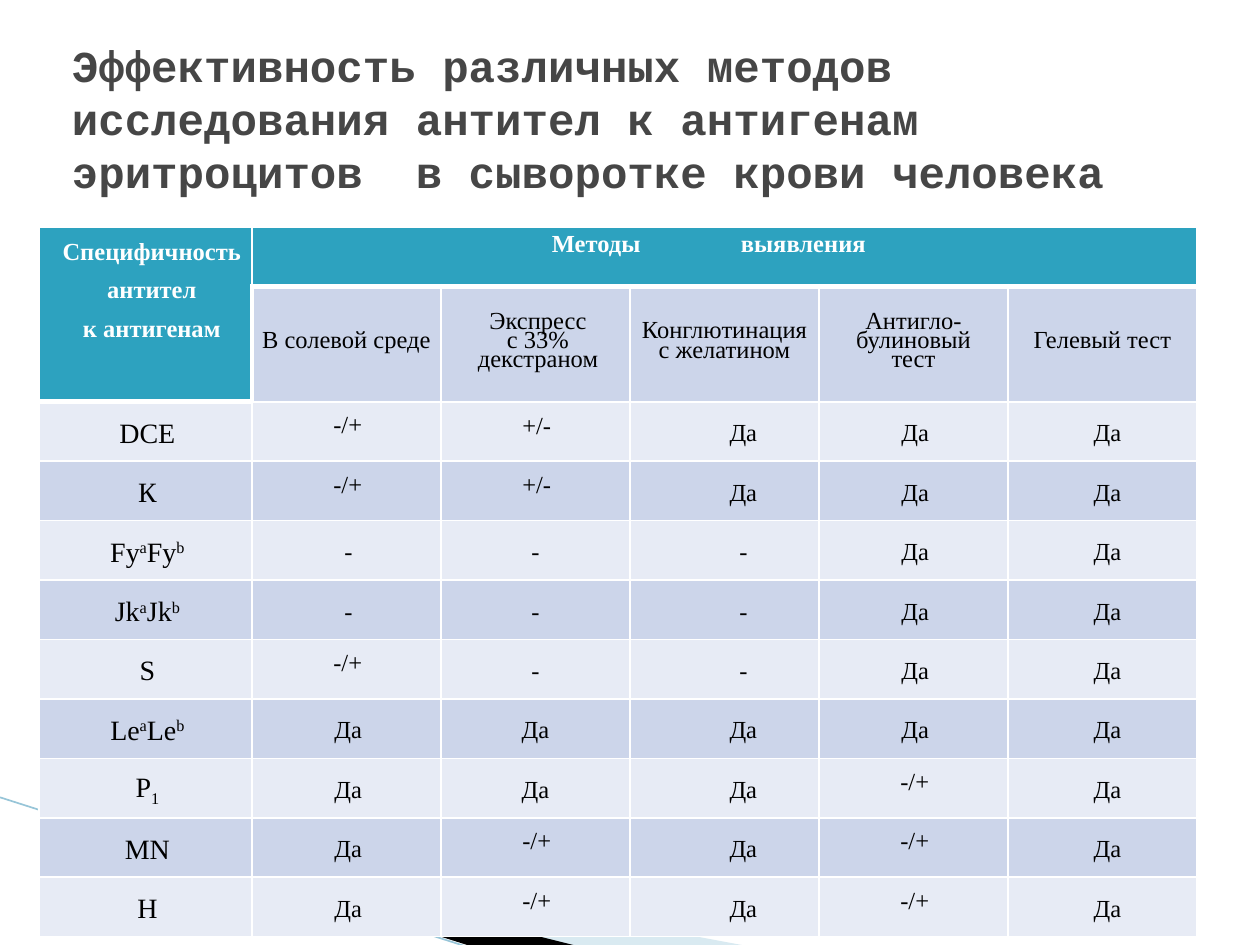
import collections

import lxml.etree
import pptx
import pptx.dml.color
import pptx.enum.shapes
import pptx.enum.text
import pptx.oxml
import pptx.oxml.ns
import pptx.util

Inches, Pt = pptx.util.Inches, pptx.util.Pt
Align = pptx.enum.text.PP_ALIGN
Anchor = pptx.enum.text.MSO_ANCHOR
qn = pptx.oxml.ns.qn

COLORS = {
    "title": "464646", "header": "2DA2BF", "header_text": "FFFFFF",
    "text": "000000", "border": "FFFFFF", "dark": "CCD5EA", "light": "E7EBF5",
    "pale_wave": "A0CBDC", "black_wave": "000000", "wave_line": "97C5D8",
}
Box = collections.namedtuple("Box", "left top width height")

TITLE = ("Эффективность различных методов исследования антител к антигенам "
         "эритроцитов  в сыворотке крови человека")
METHODS = [
    (["В солевой среде"], 10.8, 0, 0),
    (["Экспресс", "с 33%", "декстраном"], 11, 0.04, 0),
    (["Конглютинация с желатином"], 11, 0, 0),
    (["Антигло-", "булиновый", "тест"], 10.8, 0, 0),
    (["Гелевый тест"], 10.8, 0.08, -0.11),
]
RESULTS = [
    (["DCE"], ["-/+", "+/-", "Да", "Да", "Да"]),
    (["К"], ["-/+", "+/-", "Да", "Да", "Да"]),
    (["Fy", "a", "Fy", "b"], ["-", "-", "-", "Да", "Да"]),
    (["Jk", "a", "Jk", "b"], ["-", "-", "-", "Да", "Да"]),
    (["S"], ["-/+", "-", "-", "Да", "Да"]),
    (["Le", "a", "Le", "b"], ["Да", "Да", "Да", "Да", "Да"]),
    (["Р", "1"], ["Да", "Да", "Да", "-/+", "Да"]),
    (["MN"], ["Да", "-/+", "Да", "-/+", "Да"]),
    (["H"], ["Да", "-/+", "Да", "-/+", "Да"]),
]
RESULT_INDENTS = [0.03, 0, 0.3, 0.03, 0.08]
MIXED_SPACING = {"-/+": Pt(8.6), "+/-": Pt(8.9)}


def rgb(name):
    """Return the named colour."""
    return pptx.dml.color.RGBColor.from_string(COLORS[name])


def set_font(font, name, size, color, bold=False):
    """Format a font."""
    font.name, font.size, font.bold = name, Pt(size), bold
    font.color.rgb = rgb(color)


def add_wave(slide, box, points, color, opacity=100):
    """Draw a filled outline from points given as shares of the box."""
    corners = [(box.left + x * box.width, box.top + y * box.height)
               for x, y in points]
    builder = slide.shapes.build_freeform(*corners[0], scale=1.0)
    builder.add_line_segments(corners[1:], close=True)
    shape = builder.convert_to_shape()
    shape.shadow.inherit = False
    shape.fill.solid()
    shape.fill.fore_color.rgb = rgb(color)
    shape.line.fill.background()
    if opacity < 100:
        fill = shape._element.spPr.find(qn("a:solidFill"))
        lxml.etree.SubElement(fill[0], qn("a:alpha"), val=str(opacity * 1000))


def add_corner(slide, box):
    """Draw the two waves and the line of the lower left corner."""
    black_box = box._replace(width=0.75 * box.width)
    add_wave(slide, box, [(0, 0), (1, 1), (0.74, 1)], "pale_wave", 40)
    add_wave(slide, black_box, [(0, 0), (1, 1), (0.79, 1)], "black_wave")
    line = slide.shapes.add_connector(
        pptx.enum.shapes.MSO_CONNECTOR.STRAIGHT,
        int(box.left - 0.1 * box.width), int(box.top - 0.17 * box.height),
        int(box.left + 0.59 * box.width), int(box.top + 1.01 * box.height))
    line.line.color.rgb = rgb("wave_line")
    line.line.width = Pt(0.95)
    lxml.etree.SubElement(line._element.spPr, qn("a:effectLst"))


def place_title(slide, box):
    """Move and format the title placeholder."""
    title = slide.shapes.title
    title.left, title.top, title.width, title.height = box
    frame = title.text_frame
    frame.text = TITLE
    frame.word_wrap = True
    frame.auto_size = pptx.enum.text.MSO_AUTO_SIZE.NONE
    frame.vertical_anchor = Anchor.MIDDLE
    paragraph = frame.paragraphs[0]
    paragraph.alignment = Align.LEFT
    set_font(paragraph.font, "Courier New", 25.2, "title", True)


def style_cell(cell, row, column, color):
    """Set the borders, fill and insets of a cell."""
    heavy = {
        "L": (row, column) == (1, 1),
        "R": (row, column) == (1, 0),
        "T": (row == 1 and column > 0) or (row == 2 and column == 0),
        "B": (row == 0) or (row == 1 and column == 0),
    }
    properties = cell._tc.get_or_add_tcPr()
    for side, is_heavy in heavy.items():
        line = lxml.etree.SubElement(properties, qn(f"a:ln{side}"),
                                     w=str(Pt(3 if is_heavy else 1)))
        fill = lxml.etree.SubElement(line, qn("a:solidFill"))
        lxml.etree.SubElement(fill, qn("a:srgbClr"), val=COLORS["border"])
    cell.fill.solid()
    cell.fill.fore_color.rgb = rgb(color)
    cell.margin_left = cell.margin_right = Inches(0.03)
    cell.margin_top = cell.margin_bottom = 0


def write_cell(cell, lines, spacing, margin=0, indent=0, size=14,
               color="text", bold=False, align=Align.CENTER):
    """Write lines, each a list of runs, with one paragraph format."""
    frame = cell.text_frame
    for index, runs in enumerate(lines):
        paragraph = frame.add_paragraph() if index else frame.paragraphs[0]
        paragraph.alignment = align
        paragraph.line_spacing = spacing
        properties = paragraph._p.get_or_add_pPr()
        properties.set("marL", str(Inches(margin)))
        properties.set("indent", str(Inches(indent)))
        for order, text in enumerate(runs):
            run = paragraph.add_run()
            run.text = text
            set_font(run.font, "Times New Roman", size, color, bold)
            if order % 2:
                shift = "-25000" if text.isdigit() else "30000"
                run.font._element.set("baseline", shift)


def write_headers(table):
    """Merge and fill the two header rows."""
    table.cell(0, 0).merge(table.cell(1, 0))
    table.cell(0, 1).merge(table.cell(0, 5))
    write_cell(table.cell(0, 0),
               [["Специфичность"], ["антител"], ["к антигенам"]],
               Pt(22), indent=0.1, color="header_text", bold=True)
    write_cell(table.cell(0, 1), [["Методы\t\tвыявления"]], 1.15, 2.35,
               color="header_text", bold=True, align=Align.LEFT)
    for column, (lines, spacing, margin, indent) in enumerate(METHODS, 1):
        cell = table.cell(1, column)
        cell.vertical_anchor = Anchor.MIDDLE
        write_cell(cell, [[line] for line in lines], Pt(spacing), margin, indent)


def add_results_table(slide, box):
    """Add the table of antigens and detection methods."""
    rows, columns = len(RESULTS) + 2, len(METHODS) + 1
    table = slide.shapes.add_table(rows, columns, *box).table
    table.first_row = table.horz_banding = False
    first_width, method_height = Inches(1.69), Inches(0.6)
    for index, column in enumerate(table.columns):
        column.width = (int((box.width - first_width) / (columns - 1))
                        if index else first_width)
    for index, row in enumerate(table.rows):
        row.height = (method_height if index == 1
                      else int((box.height - method_height) / (rows - 1)))
        for column in range(columns):
            is_header = index == 0 or (index == 1 and column == 0)
            color = "header" if is_header else "dark" if index % 2 else "light"
            style_cell(table.cell(index, column), index, column, color)
    write_headers(table)
    for row, (antigen, marks) in enumerate(RESULTS, 2):
        write_cell(table.cell(row, 0), [antigen], 1.15, 0.03, size=16)
        for column, mark in enumerate(marks, 1):
            margin = 0.02 if mark in MIXED_SPACING else RESULT_INDENTS[column - 1]
            write_cell(table.cell(row, column), [[mark]],
                       MIXED_SPACING.get(mark, 1.15), margin)
        for column in range(columns):
            table.cell(row, column).vertical_anchor = Anchor.MIDDLE


def main():
    """Build and save the presentation."""
    presentation = pptx.Presentation()
    presentation.slide_width, presentation.slide_height = Inches(10), Inches(7.5)
    slide = presentation.slides.add_slide(presentation.slide_layouts[5])
    add_corner(slide, Box(*map(Inches, (0.54, 6.5, 5.4, 1.01))))
    place_title(slide, Box(*map(Inches, (0.47, 0.23, 9, 1.41))))
    add_results_table(slide, Box(*map(Inches, (0.31, 1.8, 9.19, 5.32))))
    presentation.save("out.pptx")


if __name__ == "__main__":
    main()
